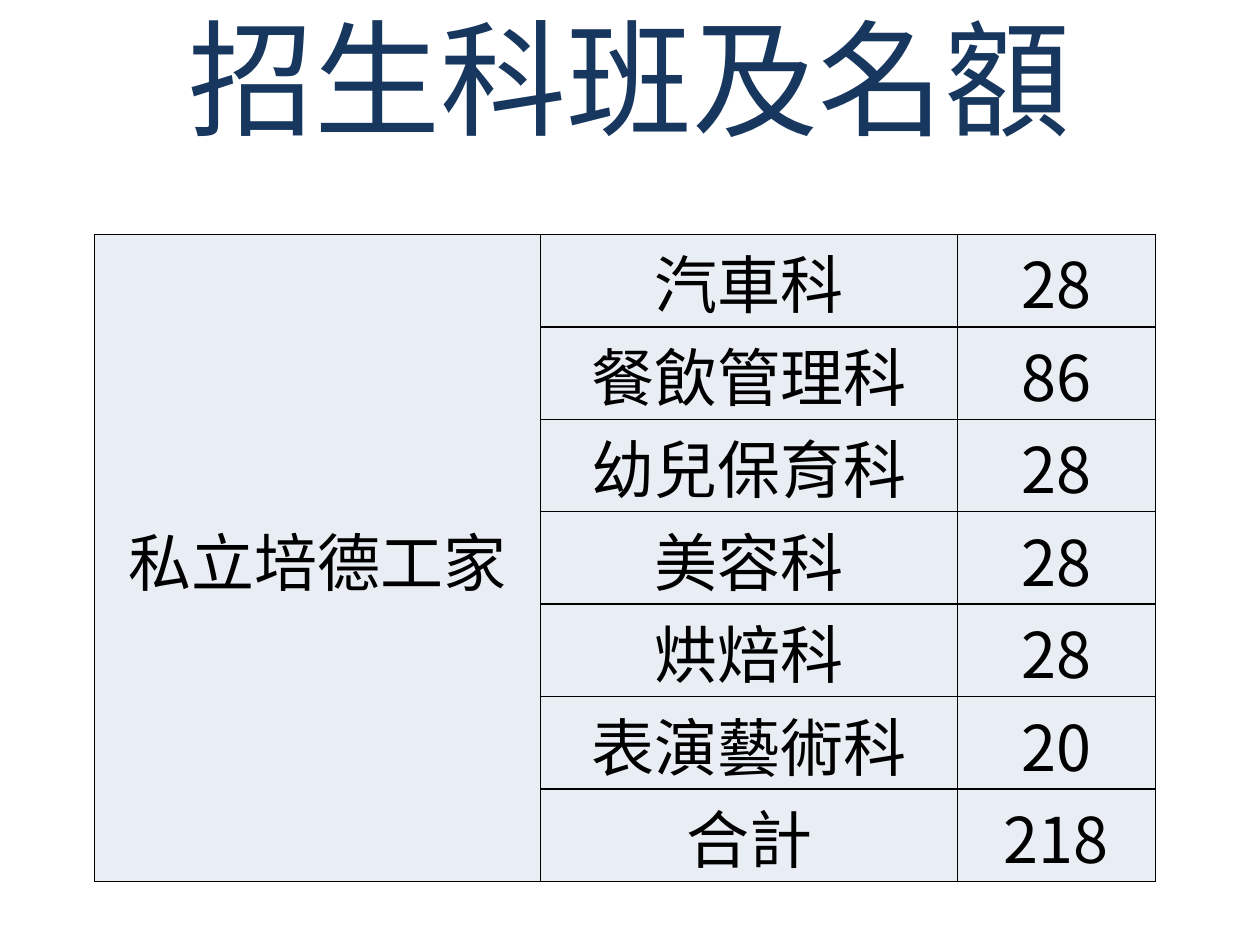
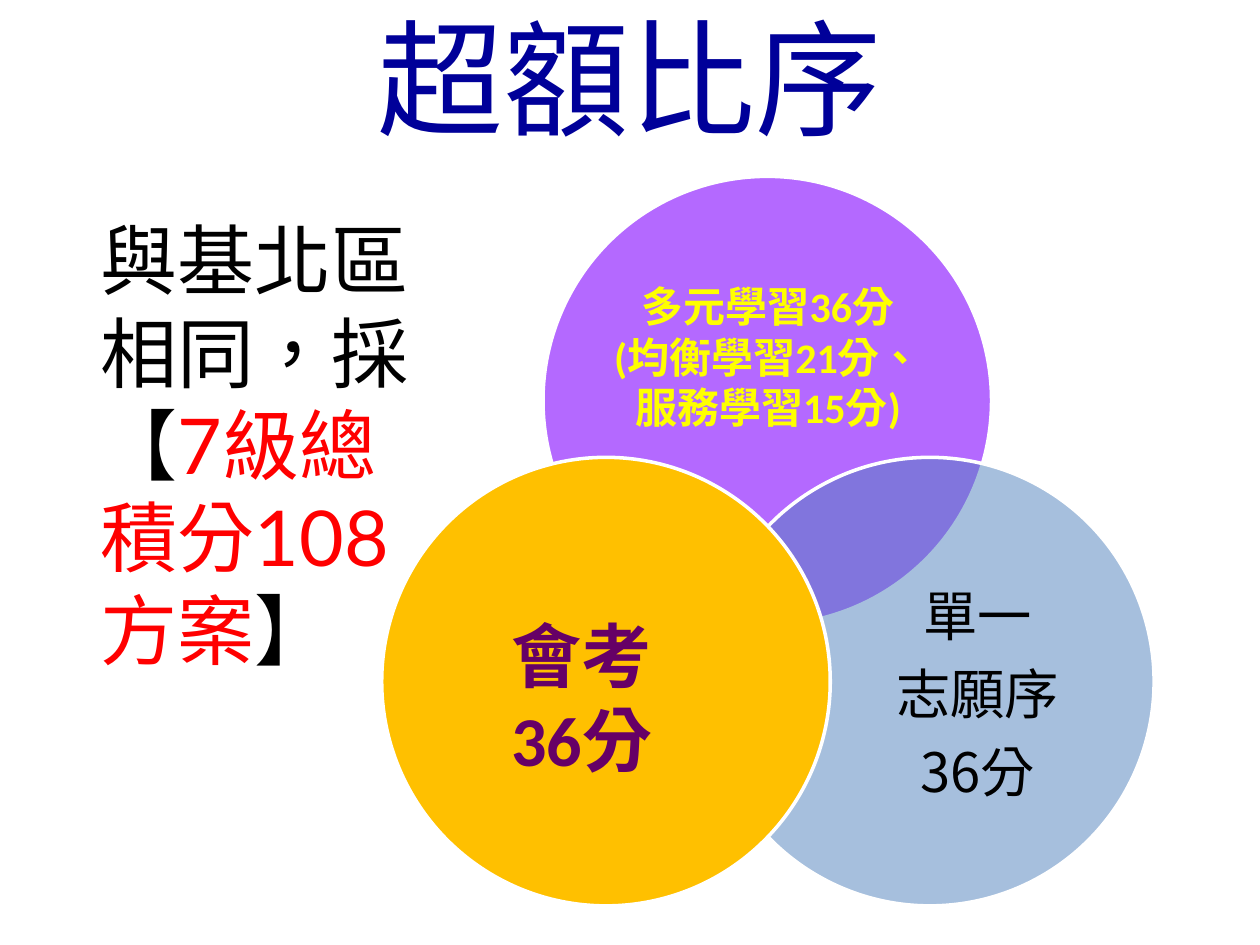
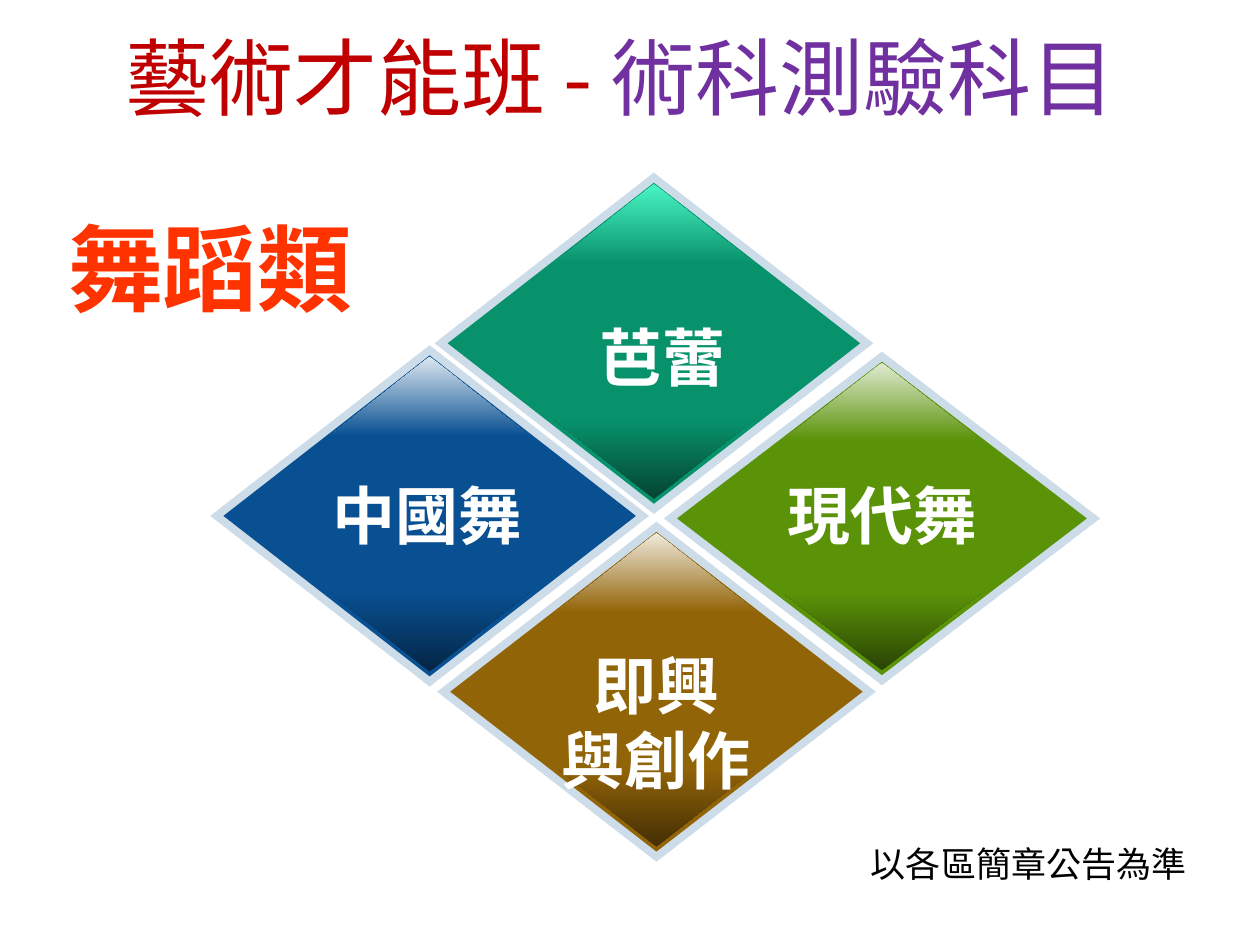
from copy import deepcopy
from dataclasses import dataclass

from lxml.etree import SubElement
from pptx import Presentation
from pptx.dml.color import RGBColor
from pptx.enum.lang import MSO_LANGUAGE_ID
from pptx.enum.shapes import MSO_SHAPE
from pptx.enum.text import MSO_ANCHOR, PP_ALIGN
from pptx.oxml import parse_xml
from pptx.oxml.ns import nsdecls, qn
from pptx.shapes.autoshape import Shape
from pptx.slide import Slide
from pptx.table import _Cell
from pptx.text.text import TextFrame
from pptx.util import Inches, Pt

SLIDE_WIDTH, SLIDE_HEIGHT = Inches(10), Inches(7.5)
COLUMN, ROW = SLIDE_WIDTH // 100, SLIDE_HEIGHT // 75

BLACK = RGBColor(0x00, 0x00, 0x00)
WHITE = RGBColor(0xFF, 0xFF, 0xFF)
NAVY = RGBColor(0x17, 0x37, 0x5E)
DEEP_BLUE = RGBColor(0x00, 0x00, 0x99)
PALE_CELL = RGBColor(0xE9, 0xED, 0xF4)
VIOLET = RGBColor(0xB4, 0x69, 0xFF)
STEEL = RGBColor(0x4F, 0x81, 0xBD)
GOLD = RGBColor(0xFF, 0xC0, 0x00)
YELLOW = RGBColor(0xFF, 0xFF, 0x00)
PLUM = RGBColor(0x66, 0x00, 0x66)
RED = RGBColor(0xFF, 0x00, 0x00)
DARK_RED = RGBColor(0xC0, 0x00, 0x00)
PURPLE = RGBColor(0x70, 0x30, 0xA0)
ORANGE_RED = RGBColor(0xFF, 0x33, 0x00)
DIAMOND_EDGE = RGBColor(0xCD, 0xDC, 0xE9)

NOTO, CALIBRI, LATO, ARIAL = "Noto Sans CJK SC", "Calibri", "Lato", "Arial"


@dataclass(frozen=True)
class Area:
    left: float
    top: float
    width: float
    height: float

    def emu(self) -> tuple[int, int, int, int]:
        return (round(self.left * COLUMN), round(self.top * ROW),
                round(self.width * COLUMN), round(self.height * ROW))


@dataclass(frozen=True)
class Style:
    size: float
    font: str
    color: RGBColor
    bold: bool = False


@dataclass(frozen=True)
class Span:
    text: str
    style: Style


@dataclass(frozen=True)
class Layout:
    align: PP_ALIGN = PP_ALIGN.CENTER
    anchor: MSO_ANCHOR = MSO_ANCHOR.TOP
    inset: bool = True
    indent: float = 0
    wrap: bool = True
    line_spacing: float = 1
    space_after: float = 0


@dataclass(frozen=True)
class Circle:
    area: Area
    fill: RGBColor
    opacity: int
    label_area: Area
    lines: list[list[Span]]
    layout: Layout


@dataclass(frozen=True)
class Dance:
    diamond: Area
    color: RGBColor
    highlight: RGBColor
    shade: RGBColor
    label_area: Area
    lines: list[str]


TITLE_AREA = Area(0, 0.2, 100, 11.7)
TITLE_LAYOUT = Layout(anchor=MSO_ANCHOR.MIDDLE)
CELL_STYLE = Style(36, NOTO, BLACK)
DANCE_STYLE = Style(36, NOTO, WHITE, True)
SCHOOL = "私立培德工家"
QUOTAS = [("汽車科", 28), ("餐飲管理科", 86), ("幼兒保育科", 28),
          ("美容科", 28), ("烘焙科", 28), ("表演藝術科", 20)]
QUOTA_COLUMNS = (35.4, 33.1, 15.7)
QUOTA_ROW = 7.34

LEARNING = Style(24, CALIBRI, YELLOW, True)
CHOICE = Style(31, NOTO, BLACK)
EXAM = Style(40, CALIBRI, PLUM, True)
CIRCLE_SIZE = 35.6

CIRCLES = [
    Circle(Area(43.1, 14, CIRCLE_SIZE, CIRCLE_SIZE), VIOLET, 100,
           Area(47.9, 20.3, 26.1, 16),
           [[Span("多元學習36分", LEARNING)],
            [Span("(均衡學習21分、\n服務學習15分)", LEARNING)]],
           Layout(anchor=MSO_ANCHOR.MIDDLE, inset=False)),
    Circle(Area(56, 36.3, CIRCLE_SIZE, CIRCLE_SIZE), STEEL, 50,
           Area(66.9, 45.5, 21.4, 19.6),
           [[Span(text, CHOICE)] for text in ("單一", "志願序", "36分")],
           Layout(anchor=MSO_ANCHOR.MIDDLE, inset=False,
                  line_spacing=0.9, space_after=11)),
    Circle(Area(30.3, 36.3, CIRCLE_SIZE, CIRCLE_SIZE), GOLD, 100,
           Area(33.6, 45.5, 21.4, 19.6),
           [[Span(text, EXAM)] for text in ("會考", "36分")],
           Layout(PP_ALIGN.LEFT, MSO_ANCHOR.MIDDLE, inset=False, indent=7)),
]

DANCES = [
    Dance(Area(35.2, 41.8, 33.8, 26.2), RGBColor(0x92, 0x64, 0x08),
          RGBColor(0xF0, 0xEA, 0xDD), RGBColor(0x44, 0x2E, 0x04),
          Area(42.1, 50.8, 20, 13.1), ["即興", "與創作"]),
    Dance(Area(35, 14.1, 33.8, 26.3), RGBColor(0x08, 0x92, 0x6B),
          RGBColor(0x49, 0xF5, 0xC4), RGBColor(0x04, 0x44, 0x32),
          Area(40, 24.8, 25.1, 7.1), ["芭蕾"]),
    Dance(Area(17.2, 27.8, 33.8, 26.3), RGBColor(0x08, 0x50, 0x92),
          RGBColor(0xDD, 0xE7, 0xF0), RGBColor(0x04, 0x25, 0x44),
          Area(23.3, 37.3, 21.1, 7.1), ["中國舞"]),
    Dance(Area(53.2, 28.3, 33.6, 25.7), RGBColor(0x5A, 0x92, 0x08),
          RGBColor(0xE1, 0xEB, 0xD2), RGBColor(0x2A, 0x44, 0x04),
          Area(58.7, 37.3, 22.6, 7.1), ["現代舞"]),
]


def add_span(paragraph, span: Span) -> None:
    for index, piece in enumerate(span.text.split("\n")):
        if index:
            paragraph.add_line_break()
            paragraph._p[-1].append(deepcopy(run._r.rPr))
        run = paragraph.add_run()
        run.text = piece
        font = run.font
        font.size = Pt(span.style.size)
        font.bold = span.style.bold
        font.color.rgb = span.style.color
        font.name = span.style.font
        font.language_id = MSO_LANGUAGE_ID.TRADITIONAL_CHINESE
        SubElement(run._r.rPr, qn("a:ea"), typeface=span.style.font)


def write_lines(frame: TextFrame, lines: list[list[Span]], layout: Layout) -> None:
    for index, spans in enumerate(lines):
        paragraph = frame.add_paragraph() if index else frame.paragraphs[0]
        paragraph.alignment = layout.align
        paragraph.line_spacing = layout.line_spacing
        paragraph.space_after = Pt(layout.space_after)
        for span in spans:
            add_span(paragraph, span)


def fill_frame(frame: TextFrame, lines: list[list[Span]], layout: Layout) -> None:
    frame.word_wrap = layout.wrap
    frame.vertical_anchor = layout.anchor
    if not layout.inset:
        frame.margin_left = round(layout.indent * COLUMN)
        frame.margin_right = frame.margin_top = frame.margin_bottom = 0
    write_lines(frame, lines, layout)


def add_text(slide: Slide, area: Area, lines: list[list[Span]], layout: Layout = Layout()) -> None:
    fill_frame(slide.shapes.add_textbox(*area.emu()).text_frame, lines, layout)


def add_title(slide: Slide, *spans: Span) -> None:
    add_text(slide, TITLE_AREA, [list(spans)], TITLE_LAYOUT)


def add_figure(slide: Slide, preset: MSO_SHAPE, area: Area) -> Shape:
    figure = slide.shapes.add_shape(preset, *area.emu())
    figure.shadow.inherit = False
    return figure


def add_rounded_title(slide: Slide, span: Span) -> None:
    plate = add_figure(slide, MSO_SHAPE.ROUNDED_RECTANGLE, TITLE_AREA)
    plate.fill.background()
    plate.line.fill.background()
    fill_frame(plate.text_frame, [[span]], TITLE_LAYOUT)


def add_outlined(slide: Slide, preset: MSO_SHAPE, area: Area, fill: RGBColor,
                 edge: RGBColor, edge_width: float) -> Shape:
    figure = add_figure(slide, preset, area)
    figure.fill.solid()
    figure.fill.fore_color.rgb = fill
    figure.line.color.rgb = edge
    figure.line.width = Pt(edge_width)
    SubElement(figure._element.spPr.find(qn("a:ln")), qn("a:miter"), lim="800000")
    return figure


def style_cell(cell: _Cell) -> None:
    cell.fill.solid()
    cell.fill.fore_color.rgb = PALE_CELL
    cell.vertical_anchor = MSO_ANCHOR.MIDDLE
    cell.margin_left = cell.margin_right = cell.margin_top = Inches(0.01)
    cell.margin_bottom = 0
    for index, side in enumerate("LRTB"):
        cell._tc.tcPr.insert(index, parse_xml(
            f'<a:ln{side} {nsdecls("a")} w="{Pt(1)}"><a:solidFill>'
            f'<a:srgbClr val="{BLACK}"/></a:solidFill></a:ln{side}>'))


def add_circle(slide: Slide, circle: Circle) -> None:
    disc = add_outlined(slide, MSO_SHAPE.OVAL, circle.area, circle.fill, WHITE, 2)
    if circle.opacity < 100:
        color = disc._element.spPr.find(qn("a:solidFill"))[0]
        SubElement(color, qn("a:alpha"), val=str(circle.opacity * 1000))
    add_text(slide, circle.label_area, circle.lines, circle.layout)


def add_glint(slide: Slide, dance: Dance, flipped: bool) -> None:
    diamond = dance.diamond
    width, height = diamond.width * 0.47, diamond.height * 0.24
    top = diamond.top + (diamond.height - height - 0.8 if flipped else 0.5)
    left = diamond.left + (diamond.width - width) / 2
    glint = add_figure(slide, MSO_SHAPE.ISOSCELES_TRIANGLE, Area(left, top, width, height))
    glint.line.fill.background()
    glint.fill.gradient()
    glint.fill.gradient_angle = 270
    tip, base = glint.fill.gradient_stops
    tip.position, base.position = 0, 1
    tip.color.rgb = dance.shade if flipped else dance.highlight
    base.color.rgb = dance.color
    if flipped:
        glint._element.spPr.find(qn("a:xfrm")).set("flipV", "1")


def add_dance(slide: Slide, dance: Dance) -> None:
    add_outlined(slide, MSO_SHAPE.DIAMOND, dance.diamond, dance.color, DIAMOND_EDGE, 4.5)
    for flipped in (False, True):
        add_glint(slide, dance, flipped)


def build_quotas(slide: Slide) -> None:
    add_title(slide, Span("招生科班及名額", Style(72, ARIAL, NAVY)))
    rows = QUOTAS + [("合計", sum(count for _, count in QUOTAS))]
    area = Area(7.5, 18.6, sum(QUOTA_COLUMNS), QUOTA_ROW * len(rows))
    quotas = slide.shapes.add_table(len(rows), len(QUOTA_COLUMNS), *area.emu()).table
    quotas.first_row = quotas.horz_banding = False
    for column, width in zip(quotas.columns, QUOTA_COLUMNS):
        column.width = round(width * COLUMN)
    for index, (department, count) in enumerate(rows):
        quotas.rows[index].height = round(QUOTA_ROW * ROW)
        for position, text in enumerate(("" if index else SCHOOL, department, str(count))):
            cell = quotas.cell(index, position)
            style_cell(cell)
            if text:
                write_lines(cell.text_frame, [[Span(text, CELL_STYLE)]], Layout())
    quotas.cell(0, 0).merge(quotas.cell(len(rows) - 1, 0))


def build_ranking(slide: Slide) -> None:
    add_rounded_title(slide, Span("超額比序", Style(72, CALIBRI, DEEP_BLUE)))
    for circle in CIRCLES:
        add_circle(slide, circle)
    plain = Style(44, CALIBRI, BLACK)
    accent, figure = Style(44, CALIBRI, RED), Style(44, LATO, RED)
    add_text(slide, Area(7, 16.4, 28.1, 38),
             [[Span("與基北區相同，採", plain)],
              [Span("【", plain), Span("7", figure), Span("級總積分", accent),
               Span("108", figure), Span("方案", accent), Span("】", plain)]],
             Layout(PP_ALIGN.LEFT))


def build_dances(slide: Slide) -> None:
    add_text(slide, Area(4.3, 16.2, 24.7, 10.1),
             [[Span("舞蹈類", Style(54, NOTO, ORANGE_RED, True))]], Layout(wrap=False))
    for dance in DANCES:
        add_dance(slide, dance)
    for dance in DANCES:
        add_text(slide, dance.label_area, [[Span(line, DANCE_STYLE)] for line in dance.lines])
    add_text(slide, Area(68, 66.4, 27.3, 4.4),
             [[Span("以各區簡章公告為準", Style(20, NOTO, BLACK))]], Layout(wrap=False))
    add_title(slide, Span("藝術才能班 - ", Style(48, NOTO, DARK_RED)),
              Span("術科測驗科目 ", Style(48, NOTO, PURPLE)))


def main() -> None:
    deck = Presentation()
    deck.slide_width, deck.slide_height = SLIDE_WIDTH, SLIDE_HEIGHT
    for build in (build_quotas, build_ranking, build_dances):
        build(deck.slides.add_slide(deck.slide_layouts[6]))
    deck.save("out.pptx")


if __name__ == "__main__":
    main()
